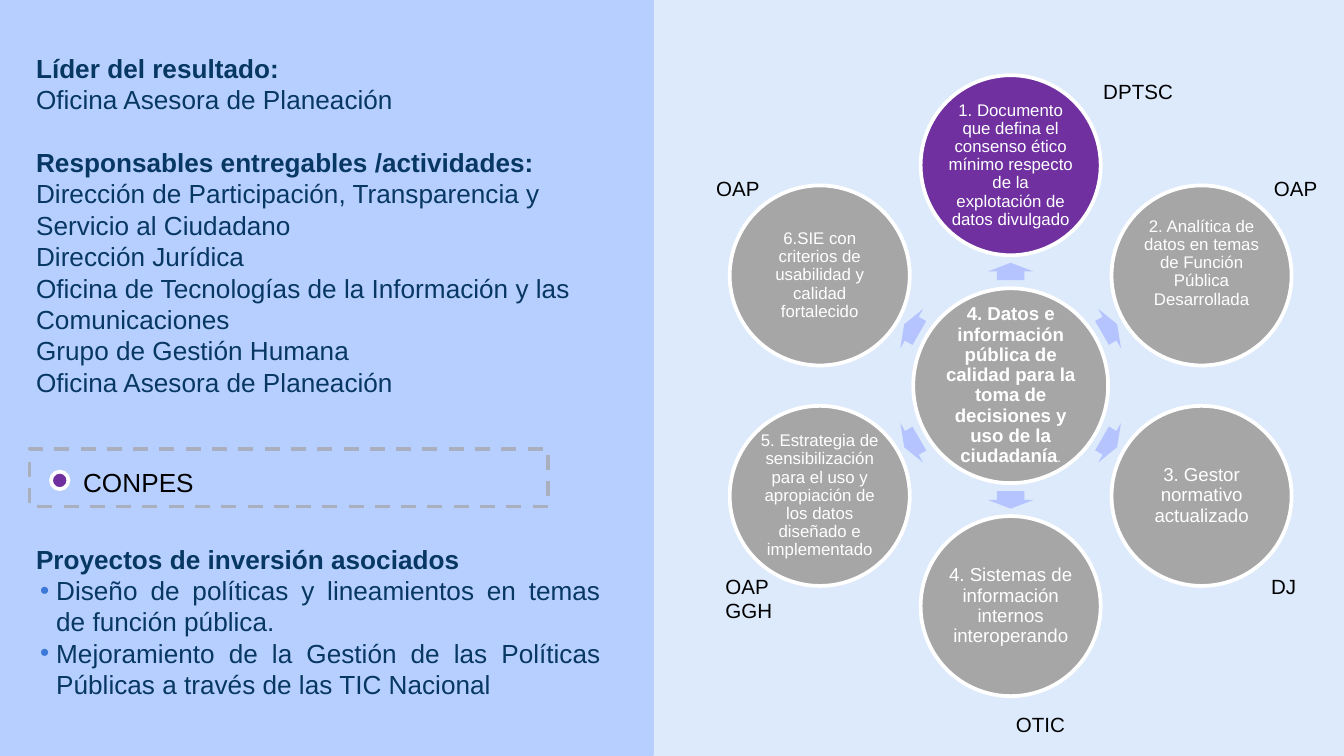
from math import cos, radians, sin

from lxml import etree
from pptx import Presentation
from pptx.dml.color import RGBColor
from pptx.enum import dml, shapes, text
from pptx.oxml.ns import qn
from pptx.util import Inches, Pt

WIDTH = 10
HEIGHT = WIDTH * 9 / 16
FONT = "Arial"
PALE = RGBColor(0xDC, 0xEA, 0xFB)
PANEL = RGBColor(0xB7, 0xCF, 0xFF)
NAVY = RGBColor(0x07, 0x37, 0x63)
BULLET = RGBColor(0x3C, 0x78, 0xD8)
DASH = RGBColor(0xA9, 0xAF, 0xBC)
PURPLE = RGBColor(0x70, 0x30, 0xA0)
GRAY = RGBColor(0xA6, 0xA6, 0xA6)
ARROW = RGBColor(0xB5, 0xC4, 0xFF)
WHITE = RGBColor(0xFF, 0xFF, 0xFF)
BLACK = RGBColor(0, 0, 0)

# A paragraph is a dict: an optional bold lead line, its text and its format
LEADER = [
    dict(t="Líder del resultado:", bold=True),
    dict(t="Oficina Asesora de Planeación"),
    dict(lead="Responsables entregables /actividades:", before=16.8,
         t="Dirección de Participación, Transparencia y\nServicio al Ciudadano"),
    dict(t="Dirección Jurídica"),
    dict(t="Oficina de Tecnologías de la Información y las Comunicaciones"),
    dict(t="Grupo de Gestión Humana"),
    dict(t="Oficina Asesora de Planeación"),
]
PROJECTS = [
    dict(t="Proyectos de inversión asociados", bold=True),
    dict(t="Diseño de políticas y lineamientos en temas de función pública.",
         bullet=True, align=text.PP_ALIGN.JUSTIFY),
    dict(t="Mejoramiento de la Gestión de las Políticas Públicas a través de "
           "las TIC Nacional", bullet=True, align=text.PP_ALIGN.JUSTIFY),
]
GOAL = ("4. Datos e información pública de calidad para la toma de decisiones "
        "y uso de la ciudadanía")
# Clockwise from the top: text, size, fill, space kept free under the text
DELIVERABLES = [
    ("1. Documento que defina el consenso ético mínimo respecto de la "
     "explotación de datos divulgado", 9, PURPLE, 0),
    ("2. Analítica de datos en temas de Función Pública Desarrollada",
     9, GRAY, 0.18),
    ("3. Gestor normativo actualizado", 10, GRAY, 0),
    ("4. Sistemas de información internos interoperando", 10, GRAY, 0),
    ("5. Estrategia de sensibilización para el uso y apropiación de los datos "
     "diseñado e implementado", 9, GRAY, 0),
    ("6.SIE con criterios de usabilidad y calidad fortalecido", 9, GRAY, 0),
]
# Lines, left, top, width
OFFICES = [
    (["DPTSC"], 8.11, 0.54, 0.92),
    (["DJ"], 9.36, 4.22, 0.6),
    (["OTIC"], 7.46, 5.25, 0.65),
    (["OAP", "GGH"], 5.3, 4.22, 0.6),
    (["OAP"], 5.23, 1.26, 0.64),
    (["OAP"], 9.38, 1.26, 0.58),
]
CENTER_X, CENTER_Y = 7.52, 2.87
HUB, NODE = 1.45, 1.34
NODE_ORBIT, ARROW_ORBIT = 1.64, 0.85
ARROW_W, ARROW_H = 0.13, 0.34

prs = Presentation()
prs.slide_width, prs.slide_height = Inches(WIDTH), Inches(HEIGHT)
slide = prs.slides.add_slide(prs.slide_layouts[6])
slide.background.fill.solid()
slide.background.fill.fore_color.rgb = PALE


def add_bullet(p):
    pPr = p._p.get_or_add_pPr()
    pPr.set("marL", str(Inches(0.15)))
    pPr.set("indent", str(Inches(-0.12)))
    color = etree.SubElement(pPr, qn("a:buClr"))
    etree.SubElement(color, qn("a:srgbClr")).set("val", str(BULLET))
    etree.SubElement(pPr, qn("a:buFont")).set("typeface", FONT)
    etree.SubElement(pPr, qn("a:buChar")).set("char", "•")


def add_run(p, words, size, color, bold):
    r = p.add_run()
    r.text = words
    r.font.name, r.font.size, r.font.bold = FONT, Pt(size), bold
    r.font.color.rgb = color


def write(tf, paragraphs, size=14, color=NAVY, spacing=None):
    """Fill a text frame with paragraph dicts."""
    tf.word_wrap = True
    for i, item in enumerate(paragraphs):
        p = tf.add_paragraph() if i else tf.paragraphs[0]
        if item.get("bullet"):
            add_bullet(p)
        p.alignment = item.get("align", text.PP_ALIGN.LEFT)
        p.line_spacing = spacing
        if "before" in item:
            p.space_before = Pt(item["before"])
        if "lead" in item:
            add_run(p, item["lead"], size, color, True)
            p.add_line_break()
        for n, line in enumerate(item["t"].split("\n")):
            if n:
                p.add_line_break()
            add_run(p, line, size, color, item.get("bold", False))


def add_text(paragraphs, x, y, w, h, **fmt):
    box = slide.shapes.add_textbox(Inches(x), Inches(y), Inches(w), Inches(h))
    write(box.text_frame, paragraphs, **fmt)


def add_shape(kind, x, y, w, h, fill=None, line=None):
    sp = slide.shapes.add_shape(kind, Inches(x), Inches(y), Inches(w), Inches(h))
    sp.shadow.inherit = False
    if fill is None:
        sp.fill.background()
    else:
        sp.fill.solid()
        sp.fill.fore_color.rgb = fill
    if line is None:
        sp.line.fill.background()
    else:
        sp.line.color.rgb = line
        sp.line.width = Pt(2)
    return sp


def add_circle(words, x, y, d, fill, size, bold=False, under=0):
    """Circle centred on x, y with white centred text."""
    sp = add_shape(shapes.MSO_SHAPE.OVAL, x - d / 2, y - d / 2, d, d, fill, WHITE)
    tf = sp.text_frame
    tf.margin_left = tf.margin_right = tf.margin_top = Inches(0.01)
    tf.margin_bottom = Inches(0.01 + under)
    tf.vertical_anchor = text.MSO_ANCHOR.MIDDLE
    write(tf, [dict(t=words, bold=bold, align=text.PP_ALIGN.CENTER)],
          size=size, color=WHITE, spacing=0.9)
    return sp


# Left panel
add_shape(shapes.MSO_SHAPE.RECTANGLE, 0.01, -0.01, 4.84, HEIGHT, PANEL, PANEL)
add_text(LEADER, 0.17, 0.34, 5.05, 2.69)
add_text(PROJECTS, 0.17, 3.99, 4.4, 1.28)
frame = add_shape(shapes.MSO_SHAPE.RECTANGLE, 0.22, 3.34, 3.86, 0.43, line=DASH)
frame.line.dash_style = dml.MSO_LINE.DASH
add_text([dict(t="CONPES")], 0.52, 3.42, 3.62, 0.34, color=BLACK)
add_shape(shapes.MSO_SHAPE.OVAL, 0.38, 3.51, 0.13, 0.13, PURPLE, WHITE)

# Radial diagram
hub = add_circle(GOAL, CENTER_X, CENTER_Y, HUB, GRAY, 10, bold=True)
add_run(hub.text_frame.paragraphs[0], ".", 7, WHITE, False)
for i, (words, size, fill, under) in enumerate(DELIVERABLES):
    angle = 360 / len(DELIVERABLES) * i - 90
    dx, dy = cos(radians(angle)), sin(radians(angle))
    arrow = add_shape(shapes.MSO_SHAPE.RIGHT_ARROW,
                      CENTER_X + ARROW_ORBIT * dx - ARROW_W / 2,
                      CENTER_Y + ARROW_ORBIT * dy - ARROW_H / 2,
                      ARROW_W, ARROW_H, ARROW)
    arrow.adjustments[0], arrow.adjustments[1] = 0.6, 0.5
    arrow.rotation = angle % 360
    add_circle(words, CENTER_X + NODE_ORBIT * dx, CENTER_Y + NODE_ORBIT * dy,
               NODE, fill, size, under=under)

# Offices in charge
for lines, x, y, w in OFFICES:
    add_text([dict(t=line) for line in lines], x, y, w,
             0.11 + 0.18 * len(lines), size=11, color=BLACK)

prs.save("out.pptx")
